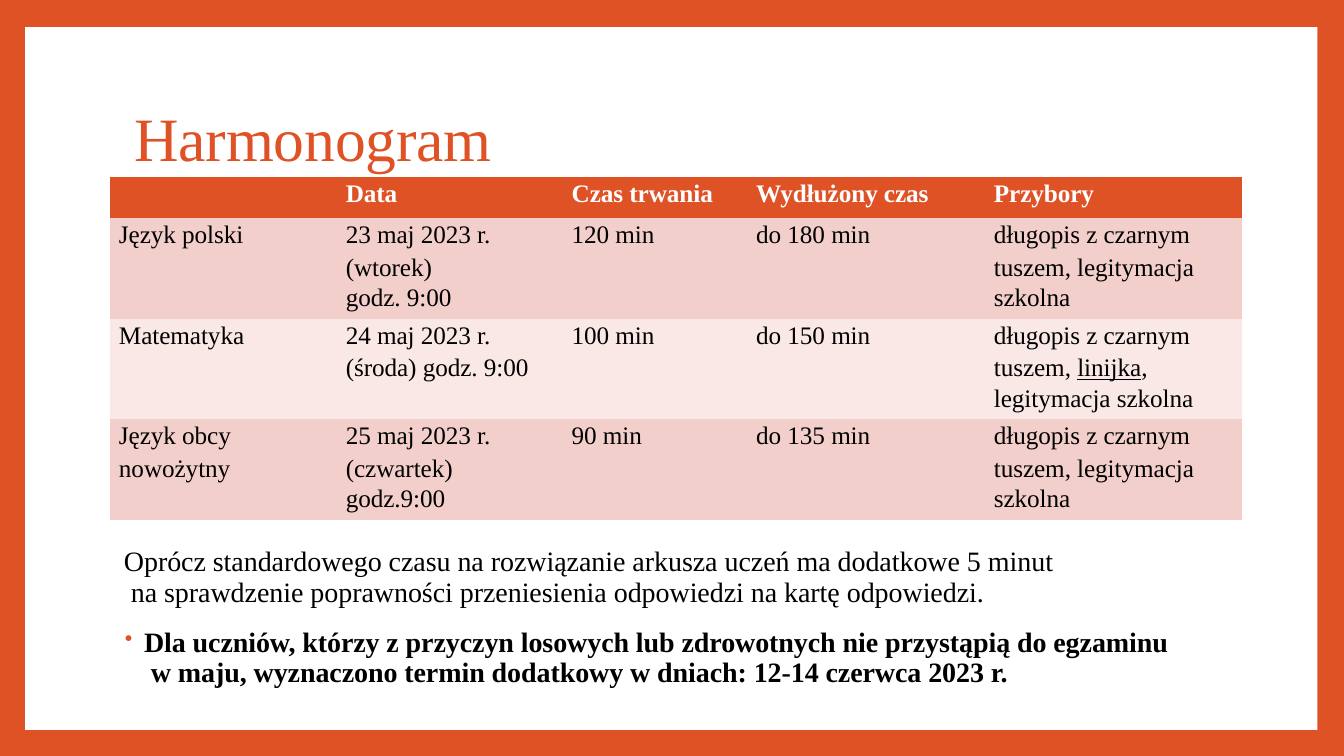
"""Build the exam timetable slide."""
from lxml import etree
from pptx import Presentation
from pptx.dml.color import RGBColor
from pptx.enum import shapes, text
from pptx.oxml import ns
from pptx.util import Pt

ORANGE, WHITE, BLACK = "DF5226", "FFFFFF", "000000"
ROSE, PALE = "F2CFCA", "F9E8E6"
NO_GRID = "{2D5ABB26-0587-4C30-8999-92F81FD0307C}"
COLUMN_WIDTHS = [132.5, 182.2, 131.8, 162, 200.1]
COLUMN_INDENTS = [6.5, 36, 15.2, 15.2, 23]
HEADER = ["", "Data", "Czas trwania", "Wydłużony czas", "Przybory"]
EXAMS = [
    (ROSE, [
        ["Język polski", "23 maj 2023 r.", "120 min", "do 180 min", "długopis z czarnym"],
        ["", "(wtorek)", "", "", "tuszem, legitymacja"],
        ["", "godz. 9:00", "", "", "szkolna"]]),
    (PALE, [
        ["Matematyka", "24 maj 2023 r.", "100 min", "do 150 min", "długopis z czarnym"],
        ["", "(środa) godz. 9:00", "", "", "tuszem, _linijka_,"],
        ["", "", "", "", "legitymacja szkolna"]]),
    (ROSE, [
        ["Język obcy", "25 maj 2023 r.", "90 min", "do 135 min", "długopis z czarnym"],
        ["nowożytny", "(czwartek)", "", "", "tuszem, legitymacja"],
        ["", "godz.9:00", "", "", "szkolna"]]),
]


def color(value):
    return RGBColor.from_string(value)


class SlideBuilder:
    def __init__(self, slide, font):
        self.slide = slide
        self.font = font

    def rectangle(self, left, top, width, height, fill):
        shape = self.slide.shapes.add_shape(
            shapes.MSO_SHAPE.RECTANGLE, Pt(left), Pt(top), Pt(width), Pt(height))
        shape.shadow.inherit = False
        shape.fill.solid()
        shape.fill.fore_color.rgb = color(fill)
        shape.line.fill.background()

    def format(self, paragraph, size, ink, bold=False, before=0, line=None,
               indent=0, hanging=0, tracking=-5):
        paragraph.space_before = Pt(before)
        if line:
            paragraph.line_spacing = Pt(line)
        properties = paragraph._p.get_or_add_pPr()
        properties.set("marL", str(Pt(indent)))
        properties.set("indent", str(-Pt(hanging)))
        for run in paragraph.runs:
            run.font.name = self.font
            run.font.size = Pt(size)
            run.font.bold = bold
            run.font.color.rgb = color(ink)
            run._r.get_or_add_rPr().set("spc", str(tracking))

    def text_box(self, left, top, width, height, content, margin_top, wrap=True):
        box = self.slide.shapes.add_textbox(Pt(left), Pt(top), Pt(width), Pt(height))
        frame = box.text_frame
        frame.word_wrap = wrap
        frame.margin_left = frame.margin_right = frame.margin_bottom = 0
        frame.margin_top = Pt(margin_top)
        frame.vertical_anchor = text.MSO_ANCHOR.TOP
        frame.text = content
        return frame.paragraphs

    def bullet(self, paragraph, ink):
        properties = paragraph._p.get_or_add_pPr()
        bullet_color = etree.SubElement(properties, ns.qn("a:buClr"))
        etree.SubElement(bullet_color, ns.qn("a:srgbClr"), val=ink)
        etree.SubElement(properties, ns.qn("a:buSzPct"), val="80000")
        etree.SubElement(properties, ns.qn("a:buChar"), char="•")

    def table(self, left, top, widths, heights):
        frame = self.slide.shapes.add_table(
            len(heights), len(widths), Pt(left), Pt(top), Pt(sum(widths)), Pt(sum(heights)))
        table = frame.table
        table.first_row = table.horz_banding = False
        table._tbl.tblPr.find(ns.qn("a:tableStyleId")).text = NO_GRID
        for column, width in zip(table.columns, widths):
            column.width = Pt(width)
        for row, height in zip(table.rows, heights):
            row.height = Pt(height)
        return table

    def cell(self, cell, content, fill, first_line, **style):
        cell.fill.solid()
        cell.fill.fore_color.rgb = color(fill)
        cell.margin_left = cell.margin_right = cell.margin_bottom = 0
        cell.margin_top = Pt(2.2 if first_line else 0)
        paragraph = cell.text_frame.paragraphs[0]
        before, underlined, after = (content.split("_") + ["", ""])[:3]
        paragraph.text = before
        if underlined:
            for part, underline in ((underlined, True), (after, False)):
                run = paragraph.add_run()
                run.text = part
                run.font.underline = underline
        spacing = {"before": 2.2} if first_line else {"line": 20.4}
        self.format(paragraph, 18, **spacing, **style)
        if not content:
            etree.SubElement(paragraph._p, ns.qn("a:endParaRPr"), sz="1000")


def main():
    presentation = Presentation()
    presentation.slide_width, presentation.slide_height = Pt(960), Pt(540)
    slide = presentation.slides.add_slide(presentation.slide_layouts[6])
    builder = SlideBuilder(slide, "Times New Roman")

    builder.rectangle(0, 0, 960, 540, ORANGE)
    builder.rectangle(18, 19.4, 923, 502, WHITE)

    title, = builder.text_box(95.8, 70.6, 258.5, 54.7, "Harmonogram", 0.7, wrap=False)
    builder.format(title, 44, ORANGE, before=1, tracking=-10)

    note, extra_date = builder.text_box(
        87.8, 387.4, 751.7, 106.6,
        "Oprócz standardowego czasu na rozwiązanie arkusza uczeń ma dodatkowe 5 minut\v"
        " na sprawdzenie poprawności przeniesienia odpowiedzi na kartę odpowiedzi.\n"
        "Dla uczniów, którzy z przyczyn losowych lub zdrowotnych nie przystąpią do egzaminu\v"
        " w maju, wyznaczono termin dodatkowy w dniach: 12-14 czerwca 2023 r.", 3.6)
    builder.format(note, 20, BLACK, before=3.7, line=21.6, indent=0.7)
    builder.format(extra_date, 20, BLACK, bold=True, before=14, line=21.6,
                   indent=15.1, hanging=13.7, tracking=-8)
    builder.bullet(extra_date, ORANGE)

    rows = [(HEADER, ORANGE, True)]
    for fill, lines in EXAMS:
        rows += [(line, fill, index == 0) for index, line in enumerate(lines)]
    heights = [28.8] + [25.2, 21.6, 25.2] * len(EXAMS)
    table = builder.table(78.5, 126.7, COLUMN_WIDTHS, heights)
    for row, (line, fill, first_line) in enumerate(rows):
        header = row == 0
        for column, content in enumerate(line):
            builder.cell(table.cell(row, column), content, fill, first_line,
                         ink=WHITE if header else BLACK, bold=header,
                         indent=COLUMN_INDENTS[column])

    presentation.save("out.pptx")


if __name__ == "__main__":
    main()
